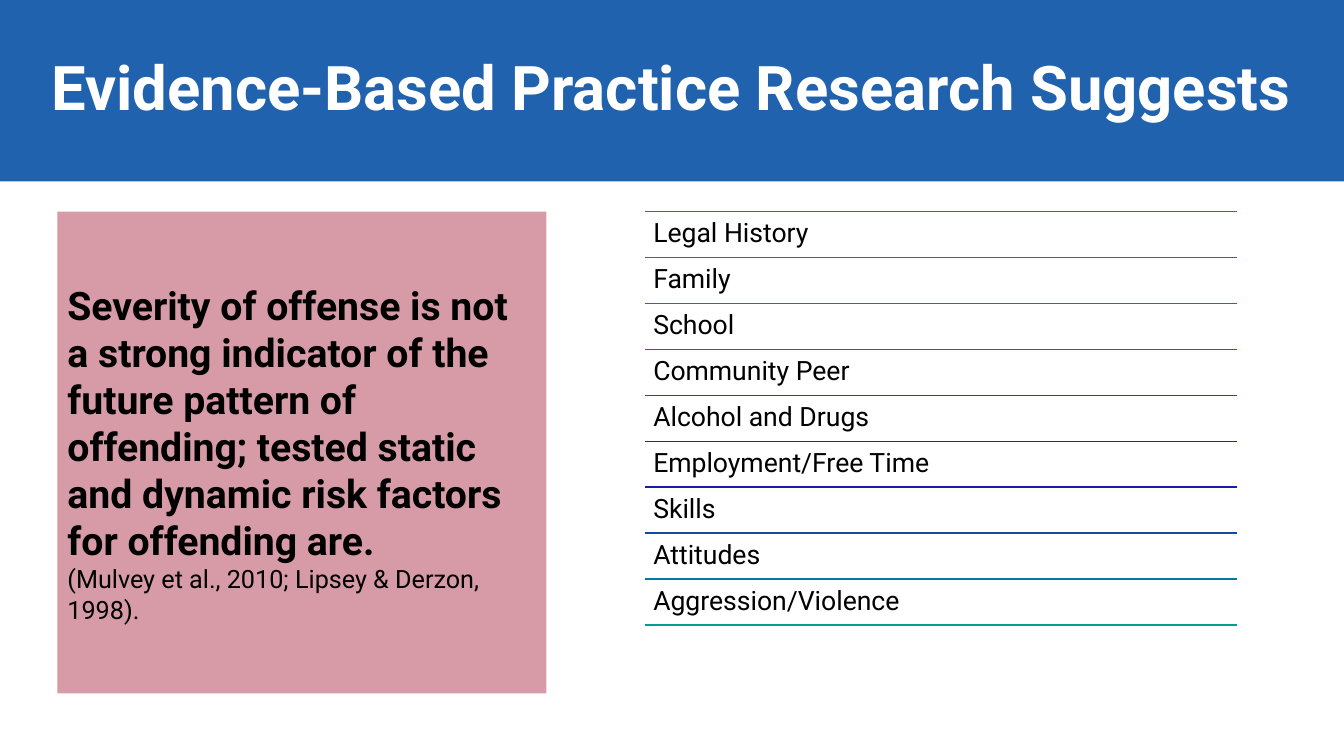
from dataclasses import dataclass
from lxml import etree
from pptx import Presentation
from pptx.dml.color import RGBColor
from pptx.enum import shapes, text
from pptx.oxml import ns
from pptx.util import Inches, Pt


@dataclass(frozen=True)
class Theme:
    face: str = "Roboto"
    blue: str = "2162AE"
    rose: str = "AF394E"
    white: str = "FFFFFF"
    black: str = "000000"
    head: int = 44
    claim: int = 28
    cite: int = 18
    item: int = 19
    rules: tuple = ("AF394E", "AE3270", "AD2B95", "9A24AC", "6B1EAA",
                    "3918A8", "1320A6", "0E4BA3", "0977A0", "059C95")


class Page:
    def __init__(self, slide, theme):
        self.slide = slide
        self.theme = theme

    def place(self, shape, box):
        shape.left, shape.top, shape.width, shape.height = map(Inches, box)

    def paint(self, shape, color, alpha=None):
        shape.fill.solid()
        shape.fill.fore_color.rgb = RGBColor.from_string(color)
        if alpha:
            tint = shape.fill._xPr.find(".//" + ns.qn("a:srgbClr"))
            etree.SubElement(tint, ns.qn("a:alpha"), val=str(alpha * 1000))

    def style(self, para, size, color, bold=False):
        font = para.font
        font.name, font.size, font.bold = self.theme.face, Pt(size), bold
        font.color.rgb = RGBColor.from_string(color)

    def frame(self, shape, anchor, side, edge):
        body = shape.text_frame
        body.word_wrap = True
        body.auto_size = text.MSO_AUTO_SIZE.NONE
        body.vertical_anchor = anchor
        body.margin_left = body.margin_right = Inches(side)
        body.margin_top = body.margin_bottom = Inches(edge)
        return body

    def title(self, words, box):
        shape = self.slide.shapes.title
        self.place(shape, box)
        self.paint(shape, self.theme.blue)
        body = self.frame(shape, text.MSO_ANCHOR.MIDDLE, 0.1, 0.05)
        body.text = words
        para = body.paragraphs[0]
        para.alignment = text.PP_ALIGN.CENTER
        para.line_spacing = 0.9
        self.style(para, self.theme.head, self.theme.white, True)

    def panel(self, claim, cite, box):
        look = self.theme
        shape = self.slide.shapes.add_shape(
            shapes.MSO_SHAPE.RECTANGLE, *map(Inches, box))
        shape.shadow.inherit = False
        shape.line.fill.background()
        self.paint(shape, look.rose, 50)
        body = self.frame(shape, text.MSO_ANCHOR.MIDDLE, 0.1, 0.05)
        body.text = claim + "\n" + cite
        sizes = (look.claim, True), (look.cite, False)
        for para, (size, bold) in zip(body.paragraphs, sizes):
            para.alignment = text.PP_ALIGN.LEFT
            self.style(para, size, look.black, bold)

    def rule(self, left, top, width, color):
        line = self.slide.shapes.add_connector(
            shapes.MSO_CONNECTOR.STRAIGHT, Inches(left), Inches(top),
            Inches(left + width), Inches(top))
        line.line.color.rgb = RGBColor.from_string(color)
        line.line.width = Pt(1)
        etree.SubElement(line._element.spPr, ns.qn("a:effectLst"))

    def label(self, words, box):
        shape = self.slide.shapes.add_textbox(*map(Inches, box))
        body = self.frame(shape, text.MSO_ANCHOR.TOP, 0.08, 0.08)
        body.text = words
        para = body.paragraphs[0]
        para.line_spacing = 0.9
        self.style(para, self.theme.item, self.theme.black)

    def ruled(self, items, left, top, width, step):
        for row, color in enumerate(self.theme.rules):
            self.rule(left, top + row * step, width, color)
        for row, words in enumerate(items):
            self.label(words, (left, top + row * step, width, 0.46))


def main():
    deck = Presentation()
    deck.slide_width, deck.slide_height = Inches(13.33), Inches(7.5)
    page = Page(deck.slides.add_slide(deck.slide_layouts[5]), Theme())
    page.title("Evidence-Based Practice Research Suggests", (0, 0, 13.33, 1.8))
    page.panel(
        "Severity of offense is not a strong indicator of the future pattern "
        "of offending; tested static and dynamic risk factors for offending are.",
        "(Mulvey et al., 2010; Lipsey & Derzon, 1998).",
        (0.57, 2.1, 4.85, 4.78))
    factors = ("Legal History", "Family", "School", "Community Peer",
               "Alcohol and Drugs", "Employment/Free Time", "Skills",
               "Attitudes", "Aggression/Violence")
    page.ruled(factors, 6.4, 2.1, 5.87, 4.1 / len(factors))
    deck.save("out.pptx")


if __name__ == "__main__":
    main()
